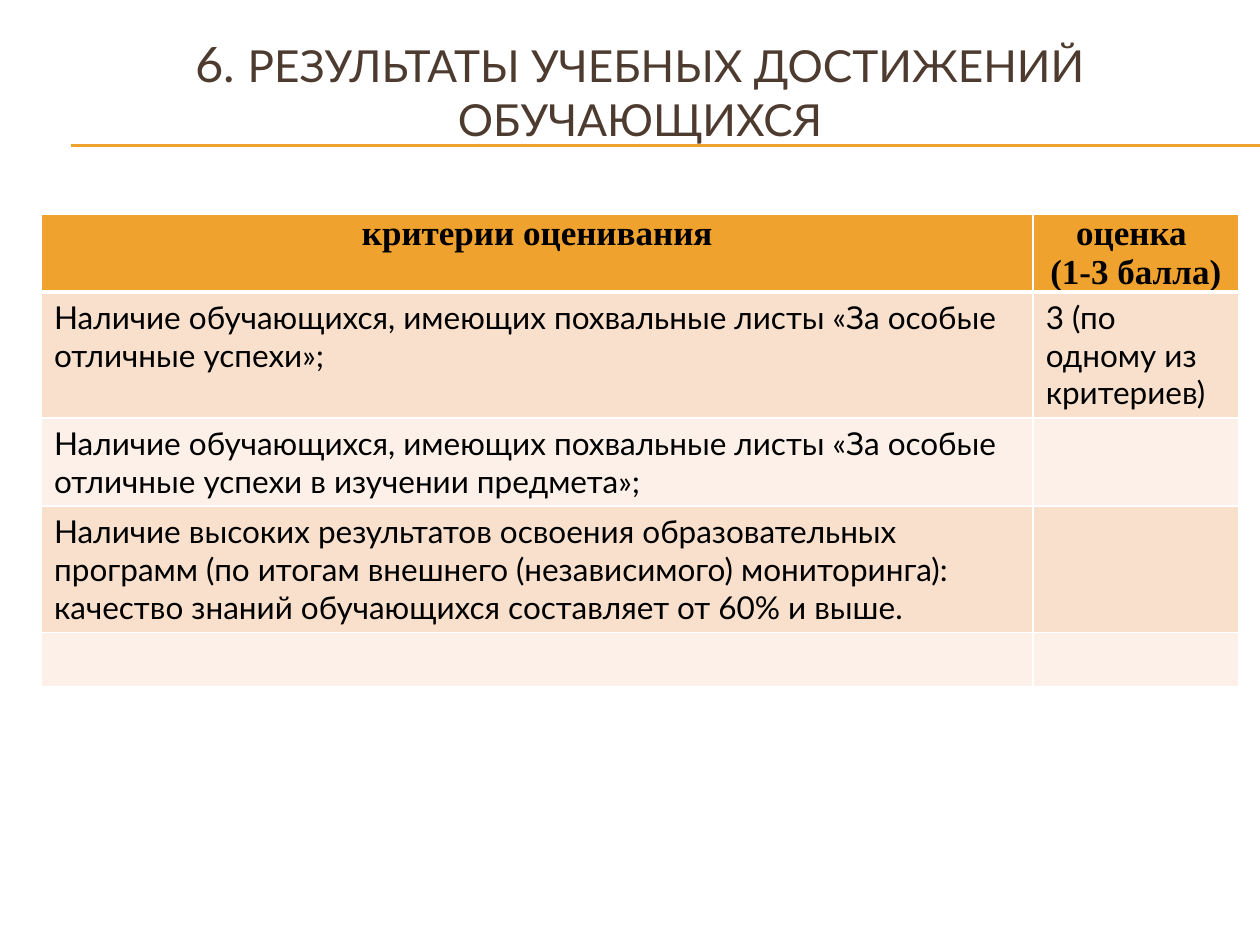
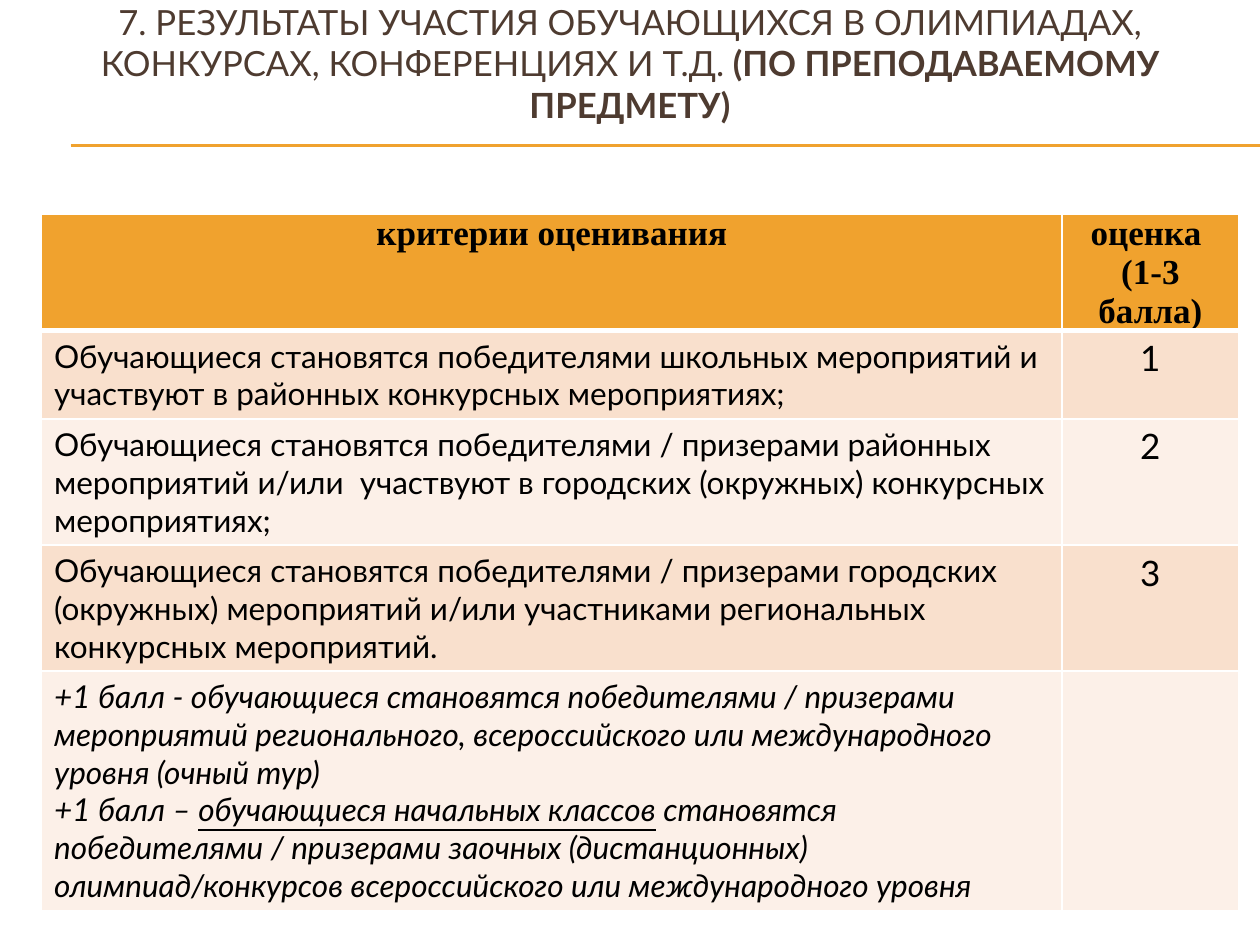
from lxml import etree
from pptx import Presentation
from pptx.dml.color import RGBColor
from pptx.enum.shapes import MSO_CONNECTOR
from pptx.enum.text import MSO_ANCHOR, MSO_AUTO_SIZE, PP_ALIGN
from pptx.oxml.ns import qn
from pptx.util import Inches, Pt

STRAIGHT = MSO_CONNECTOR.STRAIGHT
MIDDLE = MSO_ANCHOR.MIDDLE
NO_AUTOFIT = MSO_AUTO_SIZE.NONE
LEFT, CENTER = PP_ALIGN.LEFT, PP_ALIGN.CENTER
TITLE_ONLY = 5


def rgb(value):
    """Turn a hex string into a colour."""
    return RGBColor.from_string(value)


class Deck:
    """Holds the shared style and the current slide."""

    ACCENT, BROWN, BLACK, WHITE = "F0A22E", "4E3B30", "000000", "FFFFFF"
    BANDS = ("FCF0E8", "F9E0CD")
    FONT, HEAD_FONT = "Lato", "Times New Roman"
    HEAD = (["критерии оценивания"], ["оценка ", "(1-3 балла)"])

    def __init__(self):
        """Start an empty 4:3 presentation."""
        self.prs = Presentation()
        self.prs.slide_width, self.prs.slide_height = Inches(10), Inches(7.5)

    def slide(self):
        """Add a slide with the double rule under the title."""
        self.s = self.prs.slides.add_slide(self.prs.slide_layouts[TITLE_ONLY])
        for y in (1.15, 1.16):
            self.rule(y)

    def rule(self, y):
        """Draw one thin accent line to the right edge."""
        line = self.s.shapes.add_connector(
            STRAIGHT, Inches(0.56), Inches(y), Inches(10), Inches(y))
        line.line.color.rgb = rgb(self.ACCENT)
        line.line.width = Pt(0.75)
        etree.SubElement(line._element.spPr, qn("a:effectLst"))

    def run(self, p, text, size, font=FONT, color=BLACK,
            bold=False, italic=False, underline=False):
        """Add one formatted run to a paragraph."""
        r = p.add_run()
        r.text = text
        f = r.font
        f.size, f.name, f.color.rgb = Pt(size), font, rgb(color)
        f.bold, f.italic, f.underline = bold, italic, underline

    def title(self, left, top, runs):
        """Place the title and fill it with (text, size, bold) runs."""
        sp = self.s.shapes.title
        sp.left, sp.top = Inches(left), Inches(top)
        sp.width, sp.height = Inches(9.5), Inches(0.92)
        tf = sp.text_frame
        tf.auto_size, tf.vertical_anchor, tf.word_wrap = NO_AUTOFIT, MIDDLE, True
        p = tf.paragraphs[0]
        p.alignment = CENTER
        for text, size, bold in runs:
            self.run(p, text, size, color=self.BROWN, bold=bold)

    def borders(self, cell, top, bottom):
        """Give a cell white borders of the given widths."""
        tcPr = cell._tc.get_or_add_tcPr()
        for side, width in (("L", 1), ("R", 1), ("T", top), ("B", bottom)):
            ln = etree.SubElement(tcPr, qn(f"a:ln{side}"), w=str(Pt(width)))
            fill = etree.SubElement(ln, qn("a:solidFill"))
            etree.SubElement(fill, qn("a:srgbClr"), val=self.WHITE)

    def fill_cell(self, cell, paragraphs, align, **style):
        """Write paragraphs, each a string or a list of (text, style) runs."""
        tf = cell.text_frame
        for i, runs in enumerate(paragraphs):
            p = tf.add_paragraph() if i else tf.paragraphs[0]
            p.alignment = align
            if isinstance(runs, str):
                runs = [(runs, {})]
            for text, extra in runs:
                self.run(p, text, **{**style, **extra})

    def table(self, widths, heights, rows, score_size=18, score_align=LEFT):
        """Add the criteria table with its header and banded rows."""
        frame = self.s.shapes.add_table(
            len(heights), 2, Inches(0.33), Inches(1.7),
            Inches(sum(widths)), Inches(sum(heights)))
        tbl = frame.table
        for column, width in zip(tbl.columns, widths):
            column.width = Inches(width)
        for row, height in zip(tbl.rows, heights):
            row.height = Inches(height)
        for i, content in enumerate([self.HEAD, *rows]):
            for j, paragraphs in enumerate(content):
                cell = tbl.cell(i, j)
                self.borders(cell, 3 if i == 1 else 1, 1 if i else 3)
                cell.fill.solid()
                cell.fill.fore_color.rgb = rgb(
                    self.BANDS[i % 2] if i else self.ACCENT)
                if i == 0:
                    cell.margin_left = cell.margin_right = Inches(0.07)
                    cell.margin_top = cell.margin_bottom = 0
                    self.fill_cell(cell, paragraphs, CENTER, size=20,
                                   font=self.HEAD_FONT, bold=True)
                elif j == 0:
                    self.fill_cell(cell, paragraphs, LEFT, size=18)
                else:
                    self.fill_cell(cell, paragraphs, score_align, size=score_size)


def main():
    """Build both slides and save them."""
    deck = Deck()

    deck.slide()
    deck.title(0.33, 0.25, [
        ("6. ", 27.9, False),
        ("РЕЗУЛЬТАТЫ УЧЕБНЫХ ДОСТИЖЕНИЙ ОБУЧАЮЩИХСЯ", 25.2, False)])
    deck.table((7.87, 1.63), (0.61, 1, 0.7, 1, 0.43), [
        (["Наличие обучающихся, имеющих похвальные листы "
          "«За особые отличные успехи»;"],
         ["3 (по одному из критериев)"]),
        (["Наличие обучающихся, имеющих похвальные листы "
          "«За особые отличные успехи в изучении предмета»;"], []),
        (["Наличие высоких результатов освоения образовательных программ "
          "(по итогам внешнего (независимого) мониторинга): "
          "качество знаний обучающихся составляет от 60% и выше."], []),
        ([], [])])

    deck.slide()
    deck.title(0.25, 0.04, [
        ("7. РЕЗУЛЬТАТЫ УЧАСТИЯ ОБУЧАЮЩИХСЯ В ОЛИМПИАДАХ, "
         "КОНКУРСАХ, КОНФЕРЕНЦИЯХ И Т.Д. ", 19.8, False),
        ("(ПО ПРЕПОДАВАЕМОМУ ПРЕДМЕТУ)", 19.8, True)])
    italic = {"italic": True}
    deck.table((8.1, 1.4), (0.92, 0.7, 1, 1, 1.9), [
        (["Обучающиеся становятся победителями школьных мероприятий "
          "и участвуют в районных конкурсных мероприятиях;"], ["1"]),
        (["Обучающиеся становятся победителями / призерами районных "
          "мероприятий и/или  участвуют в городских (окружных) "
          "конкурсных мероприятиях;"], ["2"]),
        (["Обучающиеся становятся победителями / призерами городских "
          "(окружных) мероприятий и/или участниками региональных "
          "конкурсных мероприятий."], ["3"]),
        ([[("+1 балл - обучающиеся становятся победителями / призерами "
            "мероприятий регионального, всероссийского или международного "
            "уровня (очный тур)", italic)],
          [("+1 балл – ", italic),
           ("обучающиеся начальных классов", {**italic, "underline": True}),
           (" становятся победителями / призерами заочных (дистанционных) "
            "олимпиад/конкурсов всероссийского или международного уровня",
            italic)]], [])],
        score_size=20, score_align=CENTER)

    deck.prs.save("out.pptx")


if __name__ == "__main__":
    main()
